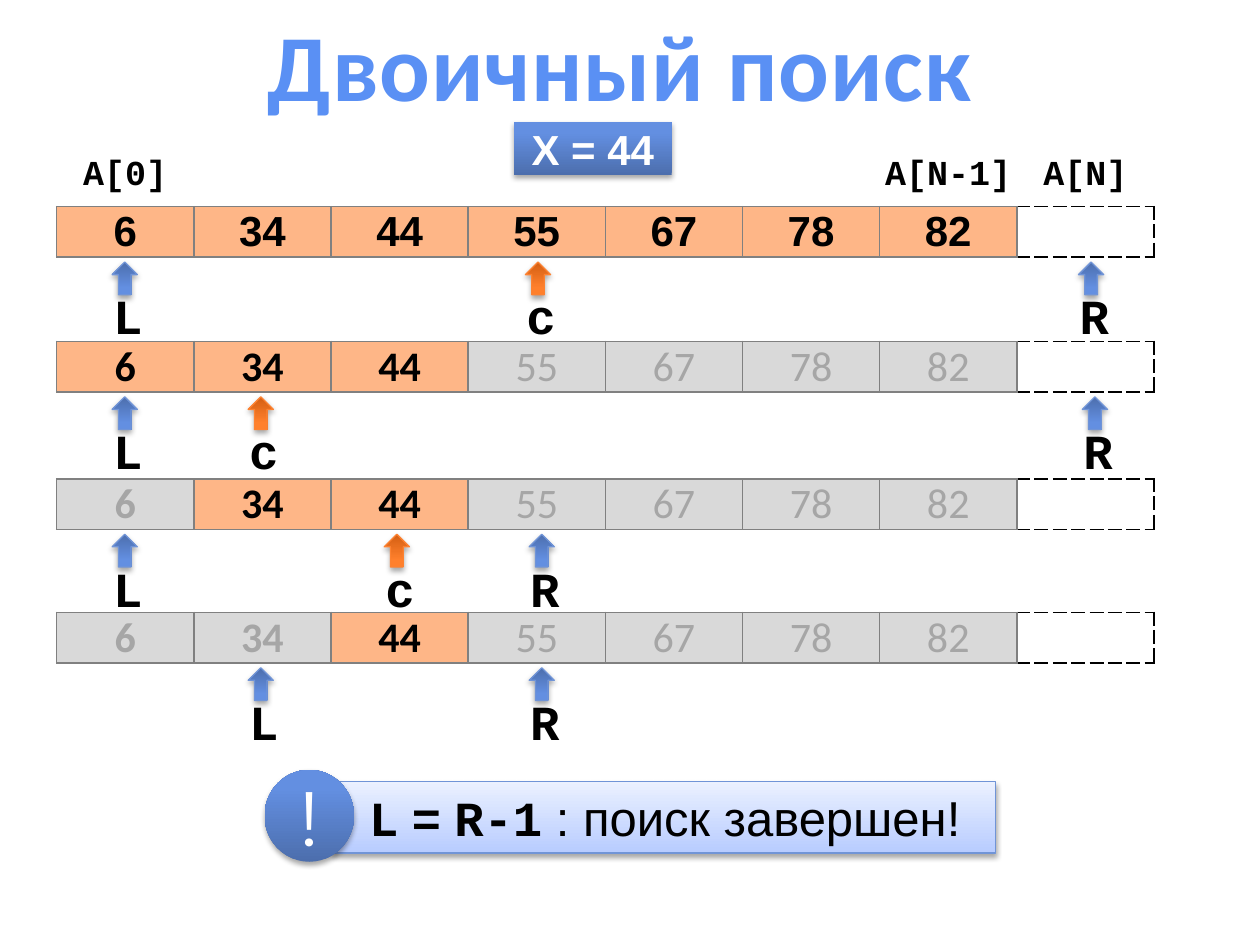
"""Builds a slide that traces a binary search through a sorted array."""
from lxml import etree
from pptx import Presentation
from pptx import util as u
from pptx.dml.color import RGBColor
from pptx.enum import shapes, text
from pptx.oxml import ns

BLACK = RGBColor(0, 0, 0)
WHITE = RGBColor(0xFF, 0xFF, 0xFF)
GRAY = RGBColor(0x80, 0x80, 0x80)
MUTED_TEXT = RGBColor(0xA6, 0xA6, 0xA6)
MUTED_FILL = RGBColor(0xD9, 0xD9, 0xD9)
PEACH = RGBColor(0xFE, 0xB6, 0x87)
TITLE_BLUE = RGBColor(0x5A, 0x90, 0xF4)
BLUE_LINE = RGBColor(0x70, 0x94, 0xD7)
ORANGE_LINE = RGBColor(0xFD, 0x82, 0x31)
BLUE = RGBColor(0x4C, 0x6E, 0xAD), RGBColor(0x63, 0x8F, 0xE1), 0.8
ORANGE = RGBColor(0xD4, 0x5F, 0x13), RGBColor(0xFF, 0x80, 0x2C), 0.8
PALE = RGBColor(0xB8, 0xCC, 0xFF), RGBColor(0xEB, 0xF1, 0xFF), 1

MONO = "Courier New"
VALUES = ["6", "34", "44", "55", "67", "78", "82"]
HEADINGS = {0: "A[0]", 6: "A[N-1]", 7: "A[N]"}
TABLE_LEFT, TABLE_WIDTH, ROW_HEIGHT = 0.45, 8.71, 0.4
COLUMNS = len(VALUES) + 1
PLAIN_STYLE = "{2D5ABB26-0587-4C30-8999-92F81FD0307C}"

# Each step: row top, active columns, columns kept bold, marker positions.
STEPS = [
    (1.64, range(0, 7), 7, [("L", 0.89), ("R", 8.56), ("с", 4.17)]),
    (2.71, range(0, 3), 3, [("L", 0.89), ("с", 1.97), ("R", 8.59)]),
    (3.8, range(1, 3), 3, [("L", 0.89), ("с", 3.05), ("R", 4.2)]),
    (4.86, range(2, 3), 3, [("L", 1.97), ("R", 4.2)]),
]


def add_run(paragraph, content, size=28, font=MONO, color=BLACK, bold=True,
            align=None, spacing=None):
    """Append formatted text to a paragraph."""
    run = paragraph.add_run()
    run.text = content
    run.font.size = u.Pt(size)
    run.font.name = font
    run.font.color.rgb = color
    run.font.bold = bold
    if align is not None:
        paragraph.alignment = align
    if spacing is not None:
        run.font._element.set("spc", str(spacing))


def add_centered(paragraph, content, **style):
    """Append formatted text to a centred paragraph."""
    add_run(paragraph, content, align=text.PP_ALIGN.CENTER, **style)


def add_shadow(shape):
    """Give a shape a soft shadow that falls straight down."""
    shape.shadow.inherit = False
    effects = shape._element.spPr.find(ns.qn("a:effectLst"))
    shadow = etree.SubElement(effects, ns.qn("a:outerShdw"), blurRad="40000",
                              dist="23000", dir="5400000", rotWithShape="0")
    color = etree.SubElement(shadow, ns.qn("a:srgbClr"), val="000000")
    etree.SubElement(color, ns.qn("a:alpha"), val="35000")


def add_shape(parent, kind, box, gradient, line=None, angle=90):
    """Add a preset shape with a two-colour gradient and a shadow."""
    shape = parent.add_shape(kind, *map(u.Inches, box))
    start, end, end_position = gradient
    shape.fill.gradient()
    shape.fill.gradient_angle = angle
    first, last = shape.fill.gradient_stops
    first.color.rgb, last.color.rgb = start, end
    first.position, last.position = 0, end_position
    if line is None:
        shape.line.fill.background()
    else:
        shape.line.color.rgb = line
        shape.line.width = u.Pt(0.75)
    add_shadow(shape)
    shape.text_frame.word_wrap = False
    shape.text_frame.vertical_anchor = text.MSO_ANCHOR.MIDDLE
    return shape


def add_text_box(parent, box, wrap=False):
    """Add a text box and return its frame."""
    frame = parent.add_textbox(*map(u.Inches, box)).text_frame
    frame.word_wrap = wrap
    return frame


def set_borders(cell, sides, color, dash="solid"):
    """Draw one-point borders on the given sides of a cell."""
    properties = cell._tc.get_or_add_tcPr()
    for side in sides:
        line = etree.SubElement(properties, ns.qn(f"a:ln{side}"), w="12700")
        fill = etree.SubElement(line, ns.qn("a:solidFill"))
        etree.SubElement(fill, ns.qn("a:srgbClr"), val=str(color))
        etree.SubElement(line, ns.qn("a:prstDash"), val=dash)


def set_margins(cell, side):
    """Set equal left and right margins and no vertical ones."""
    cell.margin_left = cell.margin_right = u.Inches(side)
    cell.margin_top = cell.margin_bottom = 0


def add_table(slide, top, rows):
    """Add an unstyled table with equal columns."""
    frame = slide.shapes.add_table(
        rows, COLUMNS, u.Inches(TABLE_LEFT), u.Inches(top),
        u.Inches(TABLE_WIDTH), u.Inches(ROW_HEIGHT * rows))
    frame._element.find(".//" + ns.qn("a:tableStyleId")).text = PLAIN_STYLE
    table = frame.table
    table.first_row = table.horz_banding = False
    for column in table.columns:
        column.width = u.Inches(TABLE_WIDTH / COLUMNS)
    return table


def fill_headings(cells):
    """Write index labels above the array."""
    for index, cell in enumerate(cells):
        set_margins(cell, 0)
        last = index == COLUMNS - 1
        set_borders(cell, "B", BLACK if last else GRAY, "dash" if last else "solid")
        cell.fill.background()
        if index in HEADINGS:
            add_centered(cell.text_frame.paragraphs[0], HEADINGS[index], size=20)


def fill_values(cells, active, bold_count, font):
    """Write the array, muting the columns outside the search range."""
    for index, value in enumerate(VALUES):
        cell = cells[index]
        set_margins(cell, 0.16)
        cell.vertical_anchor = text.MSO_ANCHOR.MIDDLE
        set_borders(cell, "LRTB", GRAY)
        cell.fill.solid()
        cell.fill.fore_color.rgb = PEACH if index in active else MUTED_FILL
        add_centered(cell.text_frame.paragraphs[0], value, size=24, font=font,
                     color=BLACK if index in active else MUTED_TEXT,
                     bold=index < bold_count)
    end = cells[-1]
    set_margins(end, 0.16)
    set_borders(end, "L", GRAY)
    set_borders(end, "RTB", BLACK, "dash")
    end.fill.background()


def add_marker(slide, label, left, top):
    """Add an upward arrow with its letter below."""
    group = slide.shapes.add_group_shape().shapes
    frame = add_text_box(group, (left - 0.09, top + 0.14, 0.44, 0.57))
    add_run(frame.paragraphs[0], label)
    gradient, line = (ORANGE, ORANGE_LINE) if label == "с" else (BLUE, BLUE_LINE)
    add_shape(group, shapes.MSO_SHAPE.UP_ARROW, (left, top, 0.2, 0.26),
              gradient, line, angle=270)


def add_step(slide, number, top, active, bold_count, markers):
    """Add one search step: the array row and its markers."""
    first = number == 0
    table = add_table(slide, top - ROW_HEIGHT * first, 1 + first)
    rows = [list(row.cells) for row in table.rows]
    if first:
        fill_headings(rows[0])
    fill_values(rows[-1], active, bold_count, "Arial" if first else "Calibri")
    for label, left in markers:
        add_marker(slide, label, left, top + ROW_HEIGHT + 0.04)


def add_conclusion(slide):
    """Add the closing statement with its exclamation badge."""
    group = slide.shapes.add_group_shape().shapes
    banner = add_shape(group, shapes.MSO_SHAPE.RECTANGLE, (2.64, 6.2, 5.26, 0.57),
                       PALE, BLUE_LINE).text_frame
    banner.word_wrap = True
    banner.vertical_anchor = text.MSO_ANCHOR.TOP
    banner.margin_left = u.Inches(0.29)
    paragraph = banner.paragraphs[0]
    paragraph.alignment = text.PP_ALIGN.LEFT
    add_run(paragraph, "L")
    add_run(paragraph, " = ", font="Arial")
    add_run(paragraph, "R-1")
    add_run(paragraph, " : поиск завершен!", font="Arial", bold=False)
    badge = add_shape(group, shapes.MSO_SHAPE.OVAL, (2.1, 6.11, 0.71, 0.73), BLUE)
    add_centered(badge.text_frame.paragraphs[0], "!", size=44, font="Montserrat",
                 color=WHITE, bold=False)


def main():
    """Build and save the slide."""
    presentation = Presentation()
    presentation.slide_width, presentation.slide_height = u.Inches(10), u.Inches(7.5)
    slide = presentation.slides.add_slide(presentation.slide_layouts[6])
    for number, step in enumerate(STEPS):
        add_step(slide, number, *step)
    target = add_shape(slide.shapes, shapes.MSO_SHAPE.RECTANGLE,
                       (4.08, 0.97, 1.25, 0.42), BLUE)
    add_centered(target.text_frame.paragraphs[0], "X = 44", size=24, font="Arial",
                 color=WHITE)
    add_conclusion(slide)
    title = add_text_box(slide.shapes, (0, 0.16, 9.84, 0.69), wrap=True)
    title.vertical_anchor = text.MSO_ANCHOR.MIDDLE
    add_centered(title.paragraphs[0], "Двоичный поиск", size=54, font="Calibri",
                 color=TITLE_BLUE, spacing=50)
    presentation.save("out.pptx")


if __name__ == "__main__":
    main()
